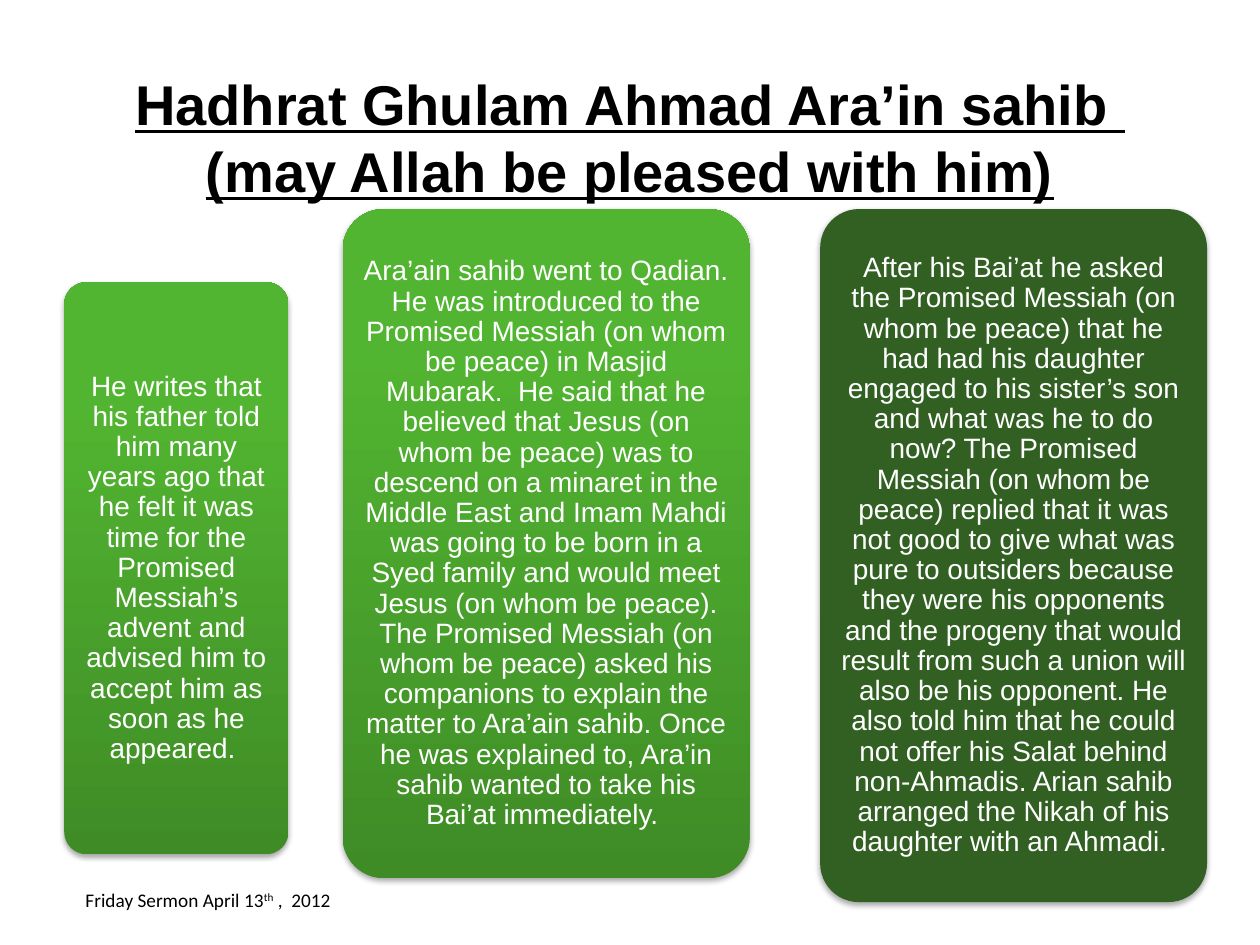
from lxml.etree import SubElement
from pptx import Presentation
from pptx.dml.color import RGBColor
from pptx.enum.shapes import MSO_SHAPE
from pptx.enum.text import MSO_ANCHOR, PP_ALIGN
from pptx.oxml.ns import qn
from pptx.util import Inches, Pt

WIDTH, HEIGHT = 10, 7.5
LIGHT_GREEN = ("3F8C26", "52B531")
DARK_GREEN = ("326023",)

TITLE = "Hadhrat Ghulam Ahmad Ara’in sahib \v(may Allah be pleased with him)"
FATHER_ADVICE = (
    "He writes that his father told him many years ago that he felt it was time "
    "for the Promised Messiah’s advent and advised him to accept him as soon as "
    "he appeared. "
)
QADIAN_VISIT = (
    "Ara’ain sahib went to Qadian. He was introduced to the Promised Messiah (on "
    "whom be peace) in Masjid Mubarak.  He said that he believed that Jesus (on "
    "whom be peace) was to descend on a minaret in the Middle East and Imam Mahdi "
    "was going to be born in a Syed family and would meet Jesus (on whom be "
    "peace). The Promised Messiah (on whom be peace) asked his companions to "
    "explain the matter to Ara’ain sahib. Once he was explained to, Ara’in sahib "
    "wanted to take his Bai’at immediately. "
)
DAUGHTER_NIKAH = (
    "After his Bai’at he asked the Promised Messiah (on whom be peace) that he had "
    "had his daughter engaged to his sister’s son and what was he to do now? The "
    "Promised Messiah (on whom be peace) replied that it was not good to give what "
    "was pure to outsiders because they were his opponents and the progeny that "
    "would result from such a union will also be his opponent. He also told him "
    "that he could not offer his Salat behind non-Ahmadis. Arian sahib arranged "
    "the Nikah of his daughter with an Ahmadi. "
)


def color(value):
    return RGBColor.from_string(value)


class SermonSlide:
    """Style and current slide; boxes are left, top, width, height on a one-inch grid."""

    heading_font, footer_font = "Arial", "Calibri"

    def __init__(self, presentation):
        self.slide = presentation.slides.add_slide(presentation.slide_layouts[6])

    def set_font(self, paragraph, name, size, value):
        font = paragraph.font
        font.name, font.size = name, Pt(size)
        font.color.rgb = color(value)
        return font

    def set_margins(self, frame, *margins):
        (frame.margin_left, frame.margin_top,
         frame.margin_right, frame.margin_bottom) = map(Inches, margins)

    def text_box(self, box):
        frame = self.slide.shapes.add_textbox(*map(Inches, box)).text_frame
        frame.word_wrap = True
        return frame

    def title(self, text, box):
        frame = self.text_box(box)
        self.set_margins(frame, 0, 0.05, 0, 0)
        paragraph = frame.paragraphs[0]
        paragraph.text = text
        paragraph.alignment = PP_ALIGN.CENTER
        font = self.set_font(paragraph, self.heading_font, 32, "000000")
        font.bold = font.underline = True

    def soft_shadow(self, shape):
        shape.shadow.inherit = False
        effects = shape._element.spPr.find(qn("a:effectLst"))
        shadow = SubElement(effects, qn("a:outerShdw"), blurRad=str(Pt(3.1)),
                            dist=str(Pt(1.8)), dir="5400000", rotWithShape="0")
        black = SubElement(shadow, qn("a:srgbClr"), val="000000")
        SubElement(black, qn("a:alpha"), val="35000")

    def card(self, text, box, colors):
        shape = self.slide.shapes.add_shape(MSO_SHAPE.ROUNDED_RECTANGLE, *map(Inches, box))
        shape.adjustments[0] = 0.1
        shape.line.fill.background()
        self.soft_shadow(shape)
        if len(colors) == 1:
            shape.fill.solid()
            shape.fill.fore_color.rgb = color(colors[0])
        else:
            shape.fill.gradient()
            shape.fill.gradient_angle = 90
            for stop, value, position in zip(shape.fill.gradient_stops, colors, (0, 0.8)):
                stop.color.rgb = color(value)
                stop.position = position

        frame = shape.text_frame
        frame.word_wrap = True
        frame.vertical_anchor = MSO_ANCHOR.MIDDLE
        self.set_margins(frame, *[0.07] * 4)
        paragraph = frame.paragraphs[0]
        paragraph.text = text
        paragraph.alignment = PP_ALIGN.CENTER
        paragraph.line_spacing = 0.9
        self.set_font(paragraph, self.heading_font, 16, "FFFFFF")

    def footer(self, before, raised, after, box):
        paragraph = self.text_box(box).paragraphs[0]
        self.set_font(paragraph, self.footer_font, 11, "000000")
        for text in (before, raised, after):
            run = paragraph.add_run()
            run.text = text
            if text == raised:
                run.font._element.set("baseline", "30000")


def main():
    presentation = Presentation()
    presentation.slide_width, presentation.slide_height = Inches(WIDTH), Inches(HEIGHT)
    sermon = SermonSlide(presentation)

    # Heading
    sermon.title(TITLE, (0.5, 0.5, 9, 1))

    # Three parts of the story
    sermon.card(FATHER_ADVICE, (0.51, 2.24, 1.78, 4.54), LIGHT_GREEN)
    sermon.card(QADIAN_VISIT, (2.72, 1.66, 3.23, 5.31), LIGHT_GREEN)
    sermon.card(DAUGHTER_NIKAH, (6.51, 1.66, 3.07, 5.5), DARK_GREEN)

    # Date of the sermon
    sermon.footer("Friday Sermon April 13", "th", " ,  2012", (0.58, 7, 3.42, 0.29))

    presentation.save("out.pptx")


if __name__ == "__main__":
    main()
